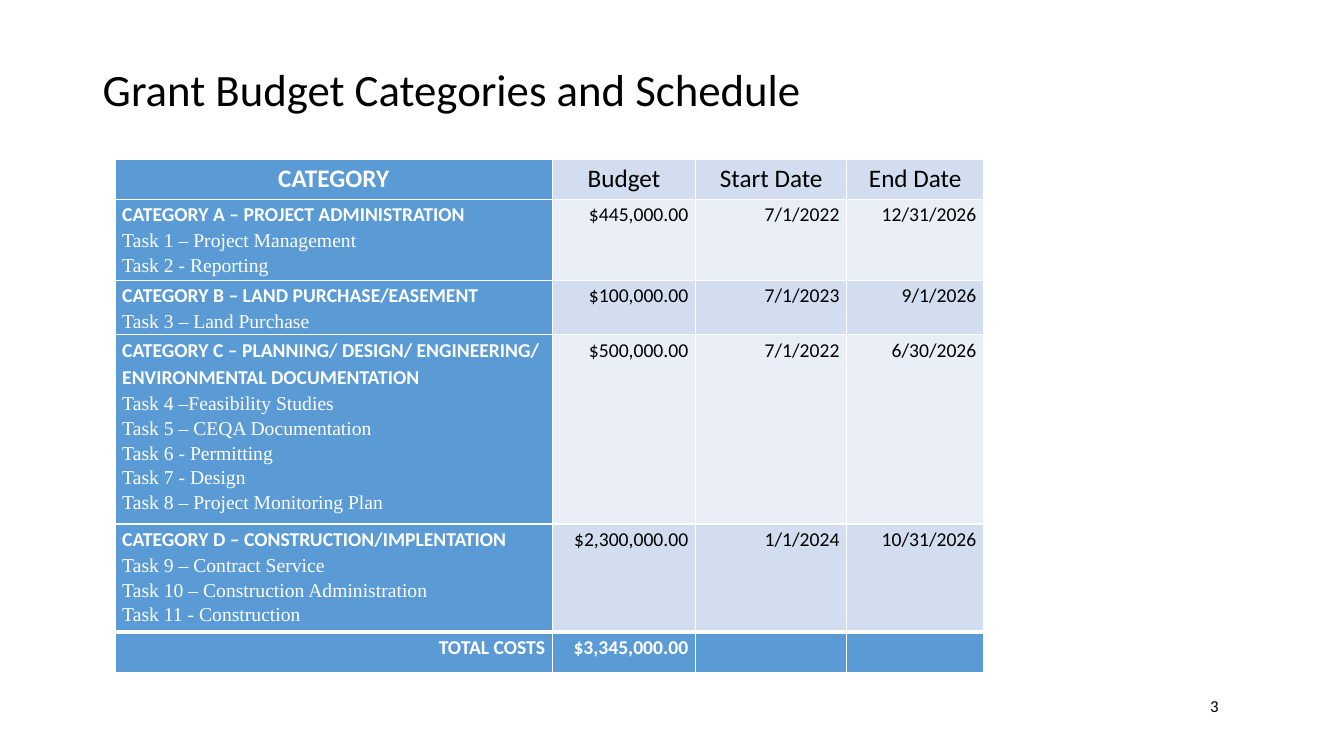
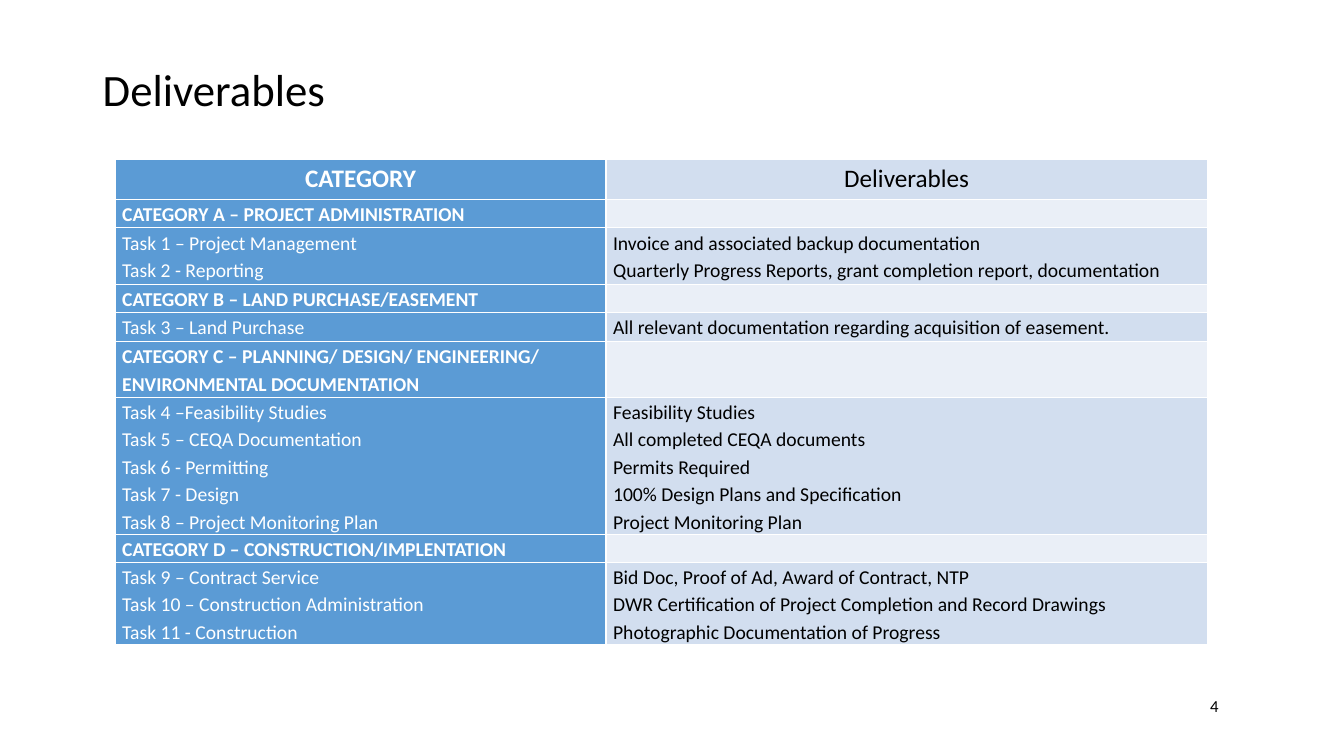
from dataclasses import dataclass

from lxml import etree
from pptx import Presentation
from pptx.dml.color import RGBColor
from pptx.enum.text import MSO_ANCHOR, PP_ALIGN
from pptx.oxml.ns import qn
from pptx.slide import Slide
from pptx.table import _Cell
from pptx.text.text import _Paragraph
from pptx.util import Cm, Pt

LEFT, CENTER, RIGHT = PP_ALIGN.LEFT, PP_ALIGN.CENTER, PP_ALIGN.RIGHT
MIDDLE = MSO_ANCHOR.MIDDLE

BLACK = RGBColor(0x00, 0x00, 0x00)
WHITE = RGBColor(0xFF, 0xFF, 0xFF)
BLUE = RGBColor(0x5B, 0x9B, 0xD5)
BAND_DARK = RGBColor(0xD2, 0xDE, 0xEF)
BAND_LIGHT = RGBColor(0xEA, 0xEF, 0xF7)

SANS = "Calibri"
SERIF = "Times New Roman"
HEADER_SIZE = 18
BODY_SIZE = 14
TABLE_LEFT, TABLE_TOP = 2.9, 4.01


@dataclass(frozen=True)
class Task:
    name: str
    deliverable: str


@dataclass(frozen=True)
class Category:
    name: str
    budget: str
    start: str
    end: str
    tasks: tuple[Task, ...]


@dataclass(frozen=True)
class Line:
    text: str
    bold: bool = False
    font: str = SANS


@dataclass(frozen=True)
class CellContent:
    lines: tuple[Line, ...]
    fill: RGBColor
    align: PP_ALIGN = LEFT
    size: int = BODY_SIZE
    top_border: int = 1


@dataclass(frozen=True)
class TableRow:
    height: float
    cells: tuple[CellContent, ...]


CATEGORIES = (
    Category("CATEGORY A – PROJECT ADMINISTRATION", "$445,000.00", "7/1/2022", "12/31/2026", (
        Task("Task 1 – Project Management", "Invoice and associated backup documentation"),
        Task("Task 2 - Reporting",
             "Quarterly Progress Reports, grant completion report, documentation"),
    )),
    Category("CATEGORY B – LAND PURCHASE/EASEMENT", "$100,000.00", "7/1/2023", "9/1/2026", (
        Task("Task 3 – Land Purchase",
             "All relevant documentation regarding acquisition of easement."),
    )),
    Category("CATEGORY C – PLANNING/ DESIGN/ ENGINEERING/ ENVIRONMENTAL DOCUMENTATION",
             "$500,000.00", "7/1/2022", "6/30/2026", (
                 Task("Task 4 –Feasibility Studies", "Feasibility Studies"),
                 Task("Task 5 – CEQA Documentation", "All completed CEQA documents"),
                 Task("Task 6 - Permitting", "Permits Required"),
                 Task("Task 7 - Design", "100% Design Plans and Specification"),
                 Task("Task 8 – Project Monitoring Plan", "Project Monitoring Plan"),
             )),
    Category("CATEGORY D – CONSTRUCTION/IMPLENTATION", "$2,300,000.00", "1/1/2024", "10/31/2026", (
        Task("Task 9 – Contract Service", "Bid Doc, Proof of Ad, Award of Contract, NTP"),
        Task("Task 10 – Construction Administration",
             "DWR Certification of Project Completion and Record Drawings"),
        Task("Task 11 - Construction", "Photographic Documentation of Progress"),
    )),
)
TOTAL_TEXTS = ("TOTAL COSTS", "$3,345,000.00", "", "")

BUDGET_COLUMNS = (11.02, 3.61, 3.81, 3.45)
BUDGET_HEIGHTS = (2.04, 1.34, 4.5, 2.54)
DELIVERABLE_COLUMNS = (12.37, 15.16)
DELIVERABLE_HEIGHTS = ((0.71, 1.42), (0.71, 0.74), (1.4, 3.45), (0.71, 2.08))
HEADER_HEIGHT = TOTAL_HEIGHT = 1.02


def format_paragraph(paragraph: _Paragraph, size: int, color: RGBColor,
                     font: str = SANS, bold: bool = False) -> None:
    for run in paragraph.runs:
        run.font.name = font
        run.font.size = Pt(size)
        run.font.bold = bold
        run.font.color.rgb = color


def add_label(slide: Slide, text: str, box: tuple[float, float, float, float],
              size: int, align: PP_ALIGN, line_spacing: float = 1.0) -> None:
    left, top, width, height = box
    text_box = slide.shapes.add_textbox(Cm(left), Cm(top), Cm(width), Cm(height))
    text_frame = text_box.text_frame
    text_frame.word_wrap = True
    text_frame.vertical_anchor = MIDDLE
    text_frame.text = text
    paragraph = text_frame.paragraphs[0]
    paragraph.alignment = align
    paragraph.line_spacing = line_spacing
    format_paragraph(paragraph, size, BLACK)


def add_titled_slide(presentation: Presentation, title: str, number: int) -> Slide:
    slide = presentation.slides.add_slide(presentation.slide_layouts[6])
    add_label(slide, title, (2.34, 1.02, 29.21, 2.59), 32, LEFT, 0.9)
    add_label(slide, str(number), (23.34, 17.27, 7.62, 1.02), 12, RIGHT)
    return slide


def set_borders(cell: _Cell, top_width: int) -> None:
    """Draw white cell borders, with the top one of the given width in points."""
    properties = cell._tc.get_or_add_tcPr()
    widths = {"a:lnL": 1, "a:lnR": 1, "a:lnT": top_width, "a:lnB": 1}
    for position, (tag, width) in enumerate(widths.items()):
        border = etree.Element(qn(tag), w=str(Pt(width)))
        fill = etree.SubElement(border, qn("a:solidFill"))
        etree.SubElement(fill, qn("a:srgbClr"), val=str(WHITE))
        properties.insert(position, border)


def fill_cell(cell: _Cell, content: CellContent) -> None:
    cell.fill.solid()
    cell.fill.fore_color.rgb = content.fill
    set_borders(cell, content.top_border)
    cell.margin_left = cell.margin_right = Cm(0.18)
    cell.margin_top = cell.margin_bottom = 0
    text_frame = cell.text_frame
    text_frame.text = "\n".join(line.text for line in content.lines)
    color = WHITE if content.fill == BLUE else BLACK
    for paragraph, line in zip(text_frame.paragraphs, content.lines):
        paragraph.alignment = content.align
        paragraph.line_spacing = 1.15
        format_paragraph(paragraph, content.size, color, line.font, line.bold)
        if not line.text:
            etree.SubElement(paragraph._p, qn("a:endParaRPr"), sz=str(content.size * 100))


def add_grid(slide: Slide, column_widths: tuple[float, ...], rows: list[TableRow]) -> None:
    frame = slide.shapes.add_table(
        len(rows), len(column_widths), Cm(TABLE_LEFT), Cm(TABLE_TOP),
        Cm(sum(column_widths)), Cm(sum(row.height for row in rows)))
    table = frame.table
    for column, width in zip(table.columns, column_widths):
        column.width = Cm(width)
    for table_row, row in zip(table.rows, rows):
        table_row.height = Cm(row.height)
        for cell, content in zip(table_row.cells, row.cells):
            fill_cell(cell, content)


def header_row(*labels: str) -> TableRow:
    first = CellContent((Line("CATEGORY", bold=True),), BLUE, CENTER, HEADER_SIZE)
    others = (CellContent((Line(label),), BAND_DARK, CENTER, HEADER_SIZE) for label in labels)
    return TableRow(HEADER_HEIGHT, (first, *others))


def budget_rows() -> list[TableRow]:
    rows = [header_row("Budget", "Start Date", "End Date")]
    for index, (category, height) in enumerate(zip(CATEGORIES, BUDGET_HEIGHTS)):
        band = BAND_DARK if index % 2 else BAND_LIGHT
        tasks = (Line(task.name, font=SERIF) for task in category.tasks)
        name = CellContent((Line(category.name, bold=True), *tasks), BLUE)
        values = (CellContent((Line(value),), band, RIGHT)
                  for value in (category.budget, category.start, category.end))
        rows.append(TableRow(height, (name, *values)))
    totals = tuple(CellContent((Line(text, bold=True),), BLUE, RIGHT, top_border=3)
                   for text in TOTAL_TEXTS)
    rows.append(TableRow(TOTAL_HEIGHT, totals))
    return rows


def deliverable_rows() -> list[TableRow]:
    rows = [header_row("Deliverables")]
    for category, (name_height, task_height) in zip(CATEGORIES, DELIVERABLE_HEIGHTS):
        rows.append(TableRow(name_height, (
            CellContent((Line(category.name, bold=True),), BLUE),
            CellContent((Line(""),), BAND_LIGHT),
        )))
        rows.append(TableRow(task_height, (
            CellContent(tuple(Line(task.name) for task in category.tasks), BLUE),
            CellContent(tuple(Line(task.deliverable) for task in category.tasks), BAND_DARK),
        )))
    return rows


def main() -> None:
    presentation = Presentation()
    presentation.slide_width = Cm(33.87)
    presentation.slide_height = Cm(19.05)
    budget_slide = add_titled_slide(presentation, "Grant Budget Categories and Schedule", 3)
    add_grid(budget_slide, BUDGET_COLUMNS, budget_rows())
    deliverables_slide = add_titled_slide(presentation, "Deliverables", 4)
    add_grid(deliverables_slide, DELIVERABLE_COLUMNS, deliverable_rows())
    presentation.save("out.pptx")


if __name__ == "__main__":
    main()
